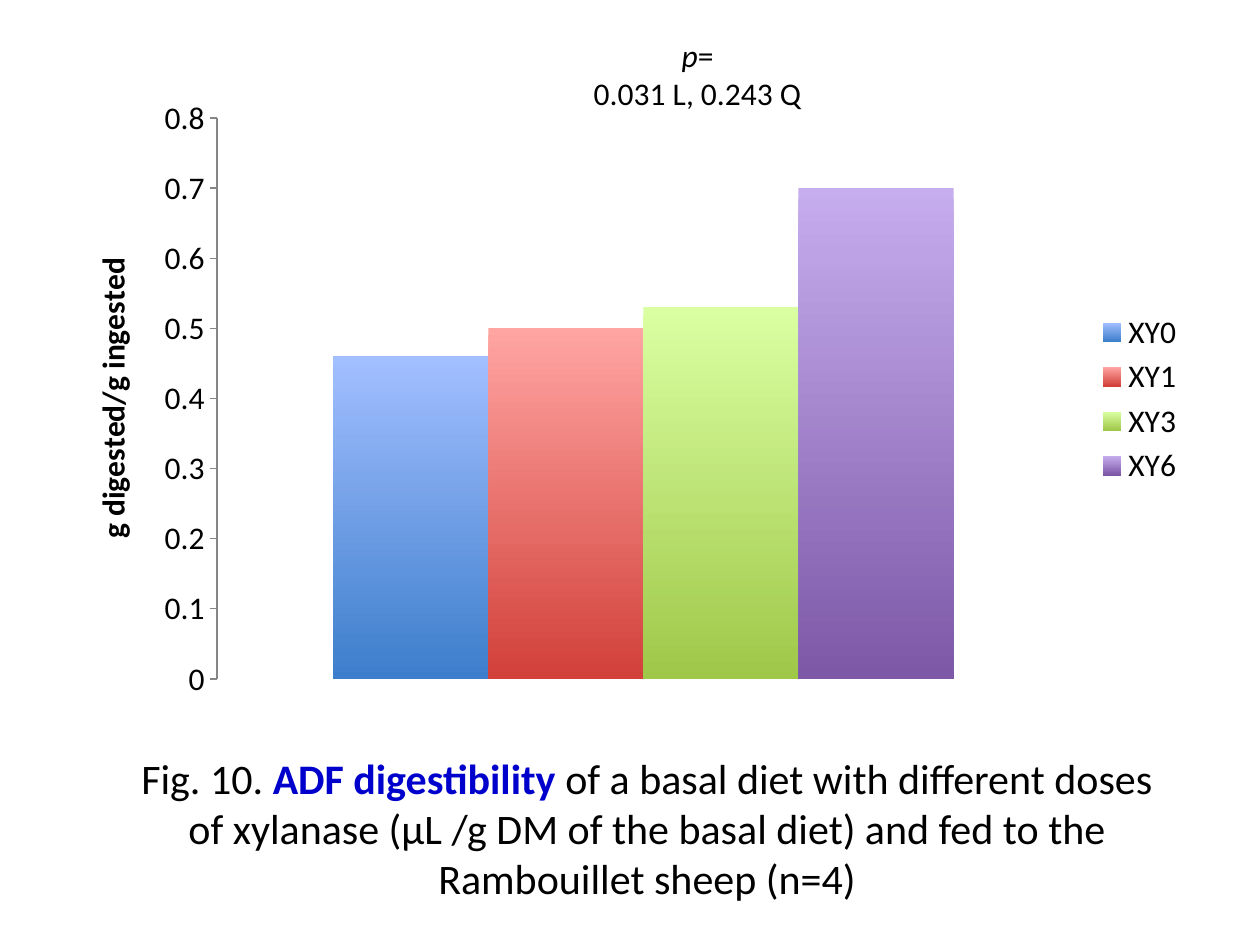
"""Build the slide on ADF digestibility by xylanase dose."""
from lxml import etree
from pptx import Presentation
from pptx.chart.data import CategoryChartData
from pptx.dml.color import RGBColor
from pptx.enum.chart import XL_CHART_TYPE, XL_LEGEND_POSITION, XL_TICK_MARK
from pptx.enum.text import PP_ALIGN
from pptx.oxml.ns import qn
from pptx.util import Pt

COLUMN = XL_CHART_TYPE.COLUMN_CLUSTERED
RIGHT = XL_LEGEND_POSITION.RIGHT
OUT = XL_TICK_MARK.OUTSIDE
CENTER = PP_ALIGN.CENTER

THEME = {
    "font": "Calibri", "body": 18, "caption": 24,
    "ink": "000000", "accent": "0000CC", "axis": "868686",
}
DOSES = [
    ("XY0", 0.46, ("A2BFFF", "3D7ECC")),
    ("XY1", 0.5, ("FFA5A2", "D2403A")),
    ("XY3", 0.53, ("DAFFA2", "9FC849")),
    ("XY6", 0.7, ("C6ADEE", "7D58A7")),
]
AXIS = "g digested/g ingested"
CAPTION = [[
    ("Fig. 10. ", {}),
    ("ADF digestibility ", {"color": "accent", "bold": True}),
    ("of a basal diet with different doses of xylanase "
     "(µL /g DM of the basal diet) and fed to the Rambouillet sheep (n=4)", {}),
]]
RESULT = [[("p", {"italic": True}), ("=", {})], [("0.031 L, 0.243 Q", {})]]

SLIDE = (1260, 945)
CHART = (63, 87, 1134, 624)
PLOT = (217, 118, 853, 561)
CAPTION_BOX = (122, 746, 1050, 204)
RESULT_BOX = (513, 30, 369, 90)
EMU = 914400 / 126


def px(nums):
    return [int(n * EMU) for n in nums]


def style(font, size, color="ink", bold=False, italic=False):
    font.name, font.size = THEME["font"], Pt(THEME[size])
    font.bold, font.italic = bold, italic
    font.color.rgb = RGBColor.from_string(THEME[color])


def add_text(slide, box, paras, size):
    frame = slide.shapes.add_textbox(*px(box)).text_frame
    frame.word_wrap = True
    for i, runs in enumerate(paras):
        para = frame.add_paragraph() if i else frame.paragraphs[0]
        para.alignment = CENTER
        for text, look in runs:
            run = para.add_run()
            run.text = text
            style(run.font, size, **look)


def place_plot(chart):
    area = chart.plots[0]._element.getparent()
    for old in area.findall(qn("c:layout")):
        area.remove(old)
    layout = etree.Element(qn("c:layout"))
    area.insert(0, layout)
    manual = etree.SubElement(layout, qn("c:manualLayout"))
    left, top, width, height = PLOT
    x, y, w, h = CHART
    parts = {
        "layoutTarget": "inner", "xMode": "edge", "yMode": "edge",
        "x": (left - x) / w, "y": (top - y) / h,
        "w": width / w, "h": height / h,
    }
    for name, val in parts.items():
        etree.SubElement(manual, qn("c:" + name), val=str(val))


def add_chart(slide):
    data = CategoryChartData()
    data.categories = ["1"]
    for name, val, _ in DOSES:
        data.add_series(name, [val])
    chart = slide.shapes.add_chart(COLUMN, *px(CHART), data).chart
    chart.has_title = False
    style(chart.font, "body")
    chart.has_legend = True
    chart.legend.position = RIGHT
    chart.legend.include_in_layout = False

    chart.category_axis.visible = False
    axis = chart.value_axis
    axis.has_major_gridlines = False
    axis.major_tick_mark = OUT
    axis.minimum_scale, axis.maximum_scale, axis.major_unit = 0, 0.8, 0.1
    axis.tick_labels.number_format = "General"
    axis.tick_labels.number_format_is_linked = False
    axis.format.line.width = Pt(0.75)
    axis.format.line.color.rgb = RGBColor.from_string(THEME["axis"])
    run = axis.axis_title.text_frame.paragraphs[0].add_run()
    run.text = AXIS
    style(run.font, "body", bold=True)

    plot = chart.plots[0]
    plot.gap_width, plot.overlap, plot.vary_by_categories = 150, 0, False
    for bar, (_, _, hues) in zip(plot.series, DOSES):
        fill = bar.format.fill
        fill.gradient()
        fill.gradient_angle = 270
        for stop, hue in zip(fill.gradient_stops, hues):
            stop.color.rgb = RGBColor.from_string(hue)
    place_plot(chart)


def main():
    deck = Presentation()
    deck.slide_width, deck.slide_height = px(SLIDE)
    slide = deck.slides.add_slide(deck.slide_layouts[6])
    add_chart(slide)
    add_text(slide, CAPTION_BOX, CAPTION, "caption")
    add_text(slide, RESULT_BOX, RESULT, "body")
    deck.save("out.pptx")


if __name__ == "__main__":
    main()
